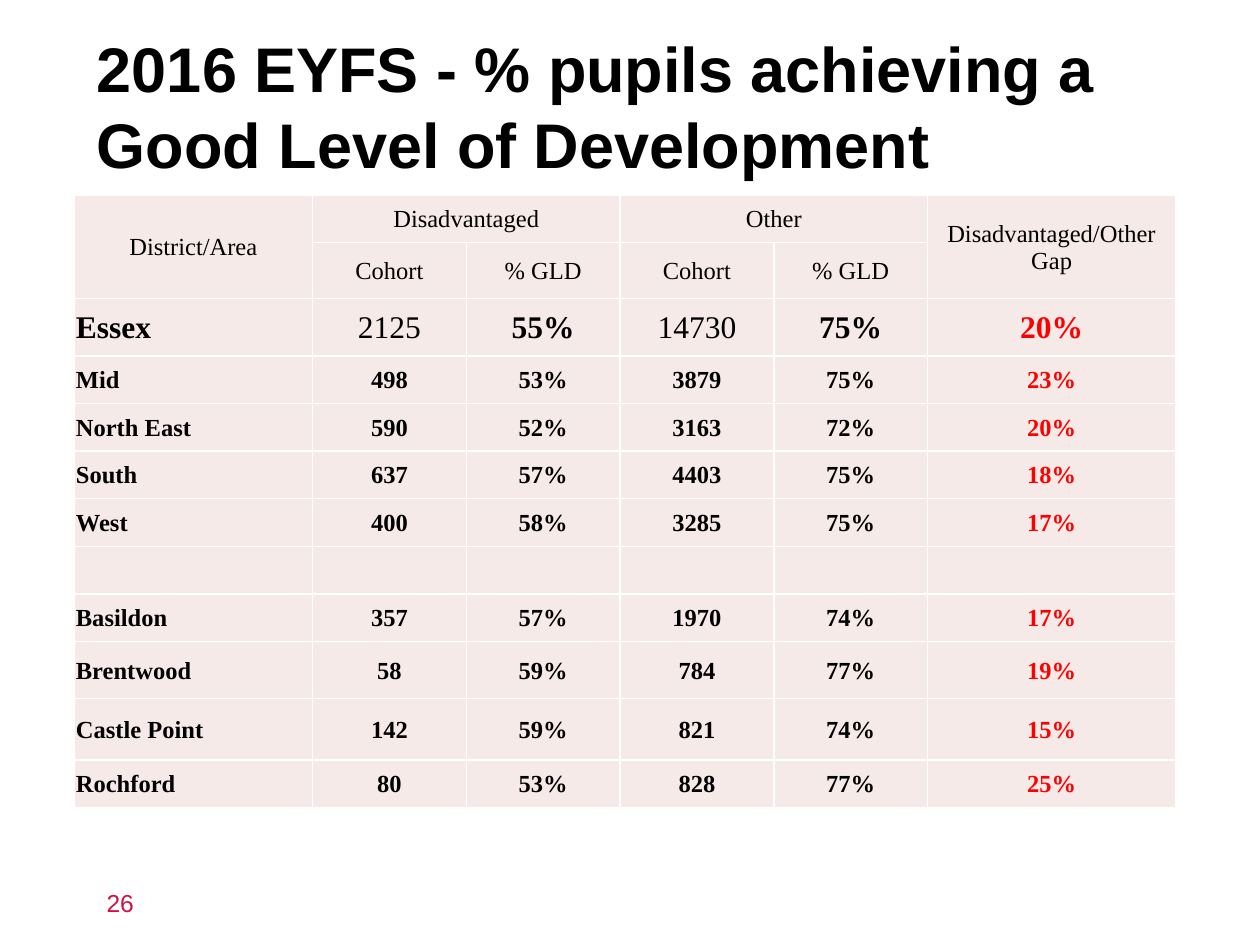
from lxml.etree import SubElement
from pptx import Presentation
from pptx.dml.color import RGBColor
from pptx.enum.text import MSO_ANCHOR as Anchor, PP_ALIGN as Align
from pptx.oxml.ns import qn
from pptx.util import Cm, Pt

TITLE = "2016 EYFS - % pupils achieving a Good Level of Development"
PAGE_NUMBER = "26"
HEADER = [
    ["District/Area", "Disadvantaged", "", "Other", "", "Disadvantaged/Other Gap"],
    ["", "Cohort", "% GLD", "Cohort", "% GLD", ""],
]
RESULTS = [
    ["Essex", "2125", "55%", "14730", "75%", "20%"],
    ["Mid", "498", "53%", "3879", "75%", "23%"],
    ["North East", "590", "52%", "3163", "72%", "20%"],
    ["South", "637", "57%", "4403", "75%", "18%"],
    ["West", "400", "58%", "3285", "75%", "17%"],
    [""] * 6,
    ["Basildon", "357", "57%", "1970", "74%", "17%"],
    ["Brentwood", "58", "59%", "784", "77%", "19%"],
    ["Castle Point", "142", "59%", "821", "74%", "15%"],
    ["Rochford", "80", "53%", "828", "77%", "25%"],
]
MERGES = [((0, 0), (1, 0)), ((0, 1), (0, 2)), ((0, 3), (0, 4)), ((0, 5), (1, 5))]
COLUMN_WIDTHS = [4.8, 3.1, 3.1, 3.1, 3.1, 5]
ROW_HEIGHT = 0.96
TALL_ROWS = {1: 1.11, 2: 1.16, 9: 1.15, 10: 1.24}
ESSEX_ROW, GAP_COLUMN = 2, 5
COHORT_COLUMNS = (1, 3)

BLACK, RED, CRIMSON = "000000", "FF0000", "D00F44"
PINK, WHITE = "F5EAE7", "FFFFFF"


def colour(value):
    return RGBColor.from_string(value)


def set_all(target, values):
    for name, value in values.items():
        setattr(target, name, value)


def write(frame, text, fill, align=Align.LEFT, **font):
    para = frame.paragraphs[0]
    para.alignment = align
    span = para.add_run()
    span.text = text
    set_all(span.font, font)
    span.font.color.rgb = colour(fill)


def add_borders(cell):
    properties = cell._tc.get_or_add_tcPr()
    for side in ("lnL", "lnR", "lnT", "lnB"):
        line = SubElement(properties, qn(f"a:{side}"), w=str(Pt(1)))
        SubElement(SubElement(line, qn("a:solidFill")), qn("a:srgbClr"), val=WHITE)


def format_cell(cell, text, row, column):
    add_borders(cell)
    cell.fill.solid()
    cell.fill.fore_color.rgb = colour(PINK)
    set_all(cell, {
        "vertical_anchor": Anchor.MIDDLE, "margin_left": Cm(0.03),
        "margin_right": Cm(0.03), "margin_top": Cm(0.03), "margin_bottom": 0,
    })
    if not text:
        return
    in_header = row < len(HEADER)
    is_essex = row == ESSEX_ROW
    write(
        cell.text_frame, text,
        RED if column == GAP_COLUMN and not in_header else BLACK,
        Align.LEFT if column == 0 and not in_header else Align.CENTER,
        name="Times New Roman", size=Pt(18 if is_essex else 14),
        bold=not in_header and not (is_essex and column in COHORT_COLUMNS),
    )


def add_results_table(page):
    rows = HEADER + RESULTS
    heights = [TALL_ROWS.get(row, ROW_HEIGHT) for row in range(len(rows))]
    table = page.shapes.add_table(
        len(rows), len(COLUMN_WIDTHS), Cm(1.5), Cm(3.93),
        Cm(sum(COLUMN_WIDTHS)), Cm(sum(heights)),
    ).table
    set_all(table, {"first_row": False, "horz_banding": False})
    for column, width in zip(table.columns, COLUMN_WIDTHS):
        column.width = Cm(width)
    for row, height in zip(table.rows, heights):
        row.height = Cm(height)
    for start, end in MERGES:
        table.cell(*start).merge(table.cell(*end))
    for row, texts in enumerate(rows):
        for column, text in enumerate(texts):
            format_cell(table.cell(row, column), text, row, column)


def main():
    deck = Presentation()
    set_all(deck, {"slide_width": Cm(25.4), "slide_height": Cm(19.05)})
    page = deck.slides.add_slide(deck.slide_layouts[5])

    title = page.shapes.title
    set_all(title, {"left": Cm(1.7), "top": Cm(0.33),
                    "width": Cm(21.8), "height": Cm(3.58)})
    set_all(title.text_frame, {"vertical_anchor": Anchor.MIDDLE, "word_wrap": True})
    write(title.text_frame, TITLE, BLACK, name="Arial", size=Pt(36), bold=True)

    add_results_table(page)

    number = page.shapes.add_textbox(Cm(1.9), Cm(17.78), Cm(5.28), Cm(0.84))
    number.text_frame.word_wrap = True
    write(number.text_frame, PAGE_NUMBER, CRIMSON, name="Arial", size=Pt(14))

    deck.save("out.pptx")


if __name__ == "__main__":
    main()
